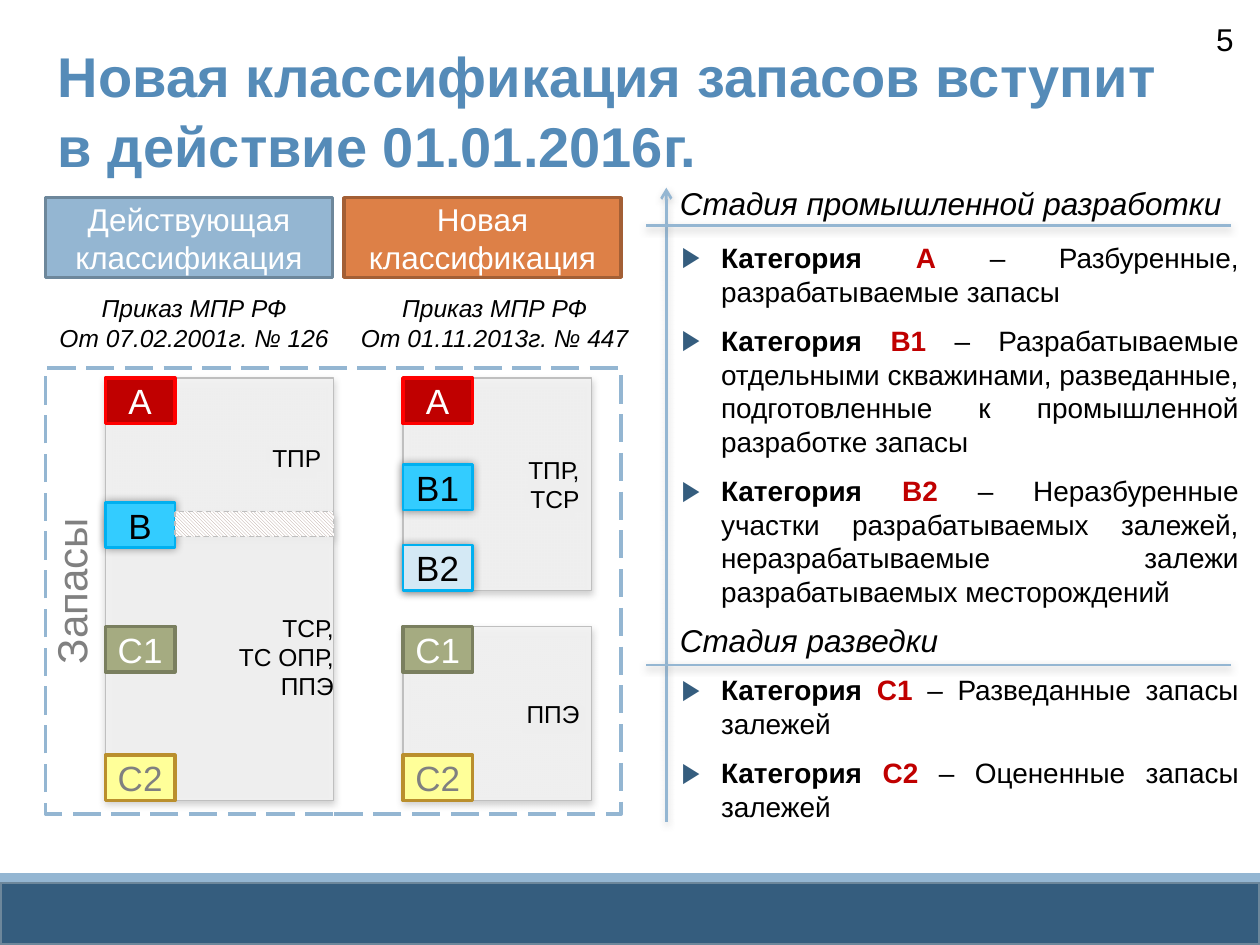
"""Build the slide comparing the current and the new classification of reserves."""
from lxml import etree
from pptx import Presentation
from pptx.dml.color import RGBColor
from pptx.enum.dml import MSO_LINE, MSO_PATTERN
from pptx.enum.shapes import MSO_CONNECTOR, MSO_SHAPE
from pptx.enum.text import MSO_ANCHOR, PP_ALIGN
from pptx.oxml.ns import qn
from pptx.util import Pt

RECT, STRAIGHT = MSO_SHAPE.RECTANGLE, MSO_CONNECTOR.STRAIGHT
LEFT, CENTER, RIGHT, JUSTIFY = PP_ALIGN.LEFT, PP_ALIGN.CENTER, PP_ALIGN.RIGHT, PP_ALIGN.JUSTIFY
TOP, MIDDLE = MSO_ANCHOR.TOP, MSO_ANCHOR.MIDDLE
DASH, LONG_DASH = MSO_LINE.DASH, MSO_LINE.LONG_DASH
DIAGONAL = MSO_PATTERN.LIGHT_DOWNWARD_DIAGONAL

COLORS = {
    "navy": "355D7E", "navy_edge": "6D879B", "sky": "94B6D2", "title": "558BB8",
    "orange": "DD8047", "orange_edge": "A35F35", "panel": "F2F2F2", "panel_edge": "BFBFBF",
    "red": "C00000", "red_edge": "FF0000", "cyan": "33CCFF", "cyan_edge": "00B0F0",
    "pale": "D4E9F5", "olive": "A5AB81", "olive_edge": "7A7F5F", "yellow": "FFFF99",
    "gold": "BA8F2D", "gray": "808080", "hatch": "B39D94", "black": "000000", "white": "FFFFFF",
}
SOFT = ("gray", 4.1, 2, 90)
GLOW = ("black", 5, 0, 0)

TITLE = "Новая классификация запасов вступит в действие 01.01.2016г."
PAGE = "5"
FRAME_LABEL = "Запасы"
HEADERS = [
    ("Действующая классификация", 26, 164, "sky", "navy_edge"),
    ("Новая классификация", 196.5, 158.5, "orange", "orange_edge"),
]
ORDERS = [
    (["Приказ МПР РФ", "От 07.02.2001г. № 126"], 26, 170),
    (["Приказ МПР РФ", "От 01.11.2013г. № 447"], 196.5, 172.5),
]
OLD_X, NEW_X = 60.25, 230.25
ROW_A, ROW_C1, ROW_C2 = 216, 358, 431.5
TAG_W, TAG_H = 39.75, 26
PANELS = [
    (["ППЭ"], NEW_X, ROW_C1, 108, 99.5, 7.2),
    (["ТПР,", "ТСР"], NEW_X, ROW_A, 108, 121.5, 7.2),
    (["ТПР"], OLD_X, ROW_A, 130.5, 91, 7.2),
    (["ТСР,", "ТС ОПР,", "ППЭ"], OLD_X, 293, 130.5, 164.5, 0),
]
TAG_STYLES = {
    "А": ("red", "red_edge", 2, "white", None),
    "В": ("cyan", "cyan_edge", 1.5, "black", GLOW),
    "В1": ("cyan", "cyan_edge", 1.5, "black", GLOW),
    "В2": ("pale", "cyan_edge", 1.5, "black", GLOW),
    "С1": ("olive", "olive_edge", 2, "white", None),
    "С2": ("yellow", "gold", 2, "gray", None),
}
TAG_COLUMNS = [
    (OLD_X, [("А", ROW_A), ("В", 287), ("С1", ROW_C1), ("С2", ROW_C2)]),
    (NEW_X, [("А", ROW_A), ("В1", 265.5), ("В2", 311.5), ("С1", ROW_C1), ("С2", ROW_C2)]),
]
STAGES = [
    ("Стадия промышленной разработки", 101.5, 129, 134, 219, [
        ("А", "Разбуренные, разрабатываемые запасы"),
        ("В1", "Разрабатываемые отдельными скважинами, разведанные, "
               "подготовленные к промышленной разработке запасы"),
        ("В2", "Неразбуренные участки разрабатываемых залежей, "
               "неразрабатываемые залежи разрабатываемых месторождений"),
    ]),
    ("Стадия разведки", 351.5, 380, 381, 96, [
        ("С1", "Разведанные запасы залежей"),
        ("С2", "Оцененные запасы залежей"),
    ]),
]


def rgb(name):
    return RGBColor.from_string(COLORS[name])


def add_color(parent, name, alpha=None):
    color = etree.SubElement(parent, qn("a:srgbClr"), val=COLORS[name])
    if alpha:
        etree.SubElement(color, qn("a:alpha"), val=str(alpha * 1000))


def cast_shadow(properties, shadow):
    effects = properties.find(qn("a:effectLst"))
    if effects is None:
        effects = etree.SubElement(properties, qn("a:effectLst"))
    if shadow:
        name, blur, distance, angle = shadow
        outer = etree.SubElement(effects, qn("a:outerShdw"), blurRad=str(Pt(blur)),
                                 dist=str(Pt(distance)), dir=str(angle * 60000), rotWithShape="0")
        add_color(outer, name, 40)


def write(shape, paragraphs, size, color="black", align=LEFT, anchor=TOP,
          insets=(7.2, 3.6, 7.2, 3.6), font=None, layout=None):
    frame = shape.text_frame
    left, top, right, bottom = map(Pt, insets)
    settings = {"word_wrap": True, "vertical_anchor": anchor, "margin_left": left,
                "margin_top": top, "margin_right": right, "margin_bottom": bottom}
    for key, value in settings.items():
        setattr(frame, key, value)
    for index, runs in enumerate(paragraphs):
        paragraph = frame.add_paragraph() if index else frame.paragraphs[0]
        for key, value in {"alignment": align, **(layout or {})}.items():
            setattr(paragraph, key, value)
        for text, run_color, bold in [(runs, color, False)] if isinstance(runs, str) else runs:
            run = paragraph.add_run()
            run.text = text
            run.font.color.rgb = rgb(run_color)
            for key, value in {"name": "Arial", "size": Pt(size), "bold": bold,
                               **(font or {})}.items():
                setattr(run.font, key, value)
    return frame


def add_text(slide, box, paragraphs, size, **style):
    return write(slide.shapes.add_textbox(*map(Pt, box)), paragraphs, size, **style)


def add_box(slide, box, fill=None, edge=None, width=2, shadow=None, dash=None):
    shape = slide.shapes.add_shape(RECT, *map(Pt, box))
    shape.shadow.inherit = False
    if fill:
        shape.fill.solid()
        shape.fill.fore_color.rgb = rgb(fill)
    else:
        shape.fill.background()
    if edge:
        shape.line.color.rgb = rgb(edge)
        shape.line.width = Pt(width)
        shape.line.dash_style = dash
    else:
        shape.line.fill.background()
    cast_shadow(shape._element.spPr, shadow)
    return shape


def add_rule(slide, ends, arrow=False):
    rule = slide.shapes.add_connector(STRAIGHT, *map(Pt, ends))
    rule.line.color.rgb = rgb("sky")
    rule.line.width = Pt(1.5)
    if arrow:
        etree.SubElement(rule.line._ln, qn("a:tailEnd"), type="arrow")
    cast_shadow(rule._element.spPr, SOFT)


def add_bullets(frame):
    for paragraph in frame.paragraphs:
        properties = paragraph._p.get_or_add_pPr()
        properties.set("marL", str(Pt(22.5)))
        properties.set("indent", str(Pt(-22.5)))
        add_color(etree.SubElement(properties, qn("a:buClr")), "navy")
        etree.SubElement(properties, qn("a:buFont"), typeface="Arial")
        etree.SubElement(properties, qn("a:buChar"), char="▶")


def add_comparison(slide):
    for label, x, width, fill, edge in HEADERS:
        write(add_box(slide, (x, 113, width, 45.5), fill, edge), [label], 18,
              color="white", align=CENTER, anchor=MIDDLE)
    for lines, x, width in ORDERS:
        add_text(slide, (x, 164, width, 41), lines, 14, align=CENTER, font={"italic": True})
    for lines, x, y, width, height, inset in PANELS:
        panel = add_box(slide, (x, y, width, height), "panel", "panel_edge", 0.75, SOFT)
        tint = panel._element.spPr.find(qn("a:solidFill"))[0]
        etree.SubElement(tint, qn("a:alpha"), val="91000")
        write(panel, lines, 14, align=RIGHT, anchor=MIDDLE, insets=(7.2, 3.6, inset, 3.6))
    for x, tags in TAG_COLUMNS:
        for label, y in tags:
            fill, edge, width, color, shadow = TAG_STYLES[label]
            write(add_box(slide, (x, y, TAG_W, TAG_H), fill, edge, width, shadow), [label], 20,
                  color=color, align=CENTER, anchor=MIDDLE, insets=(0, 3.6, 0, 3.6))
    frame = add_box(slide, (26, 210.25, 329, 255), edge="sky", dash=LONG_DASH)
    label = write(frame, [FRAME_LABEL], 24, color="gray", align=CENTER, insets=(0, 3.6, 7.2, 3.6))
    label._txBody.bodyPr.set("vert", "vert270")
    overlap = add_box(slide, (OLD_X + TAG_W, 292.25, 90.75, 14.5), "white", "panel_edge", 0.75,
                      dash=DASH)
    overlap.fill.patterned()
    overlap.fill.pattern = DIAGONAL
    overlap.fill.fore_color.rgb = rgb("hatch")
    overlap.fill.back_color.rgb = rgb("white")


def add_stages(slide):
    spacing = {"space_before": Pt(6), "space_after": Pt(3)}
    add_rule(slide, (380.75, 469.5, 380.75, 107.25), arrow=True)
    for stage, heading_y, rule_y, list_y, height, categories in STAGES:
        add_rule(slide, (369.25, rule_y, 703.25, rule_y))
        add_text(slide, (381.5, heading_y, 338, 29), [stage], 18, font={"italic": True})
        entries = [[("Категория ", "black", True), (code, "red", True),
                    (f" – {meaning}", "black", False)] for code, meaning in categories]
        add_bullets(add_text(slide, (382.5, list_y, 332.5, height), entries, 16,
                             align=JUSTIFY, layout=spacing))


def main():
    deck = Presentation()
    deck.slide_width, deck.slide_height = Pt(720), Pt(540)
    slide = deck.slides.add_slide(deck.slide_layouts[6])
    add_box(slide, (0, 504, 720, 36), "navy", "navy_edge")
    add_box(slide, (0, 499, 720, 5), "sky")
    add_text(slide, (634.5, 8, 77.5, 29), [PAGE], 18, align=RIGHT)
    add_text(slide, (26, 18, 662.5, 84), [TITLE], 32, color="title",
             font={"bold": True}, layout={"line_spacing": 1.05})
    add_comparison(slide)
    add_stages(slide)
    deck.save("out.pptx")


if __name__ == "__main__":
    main()
